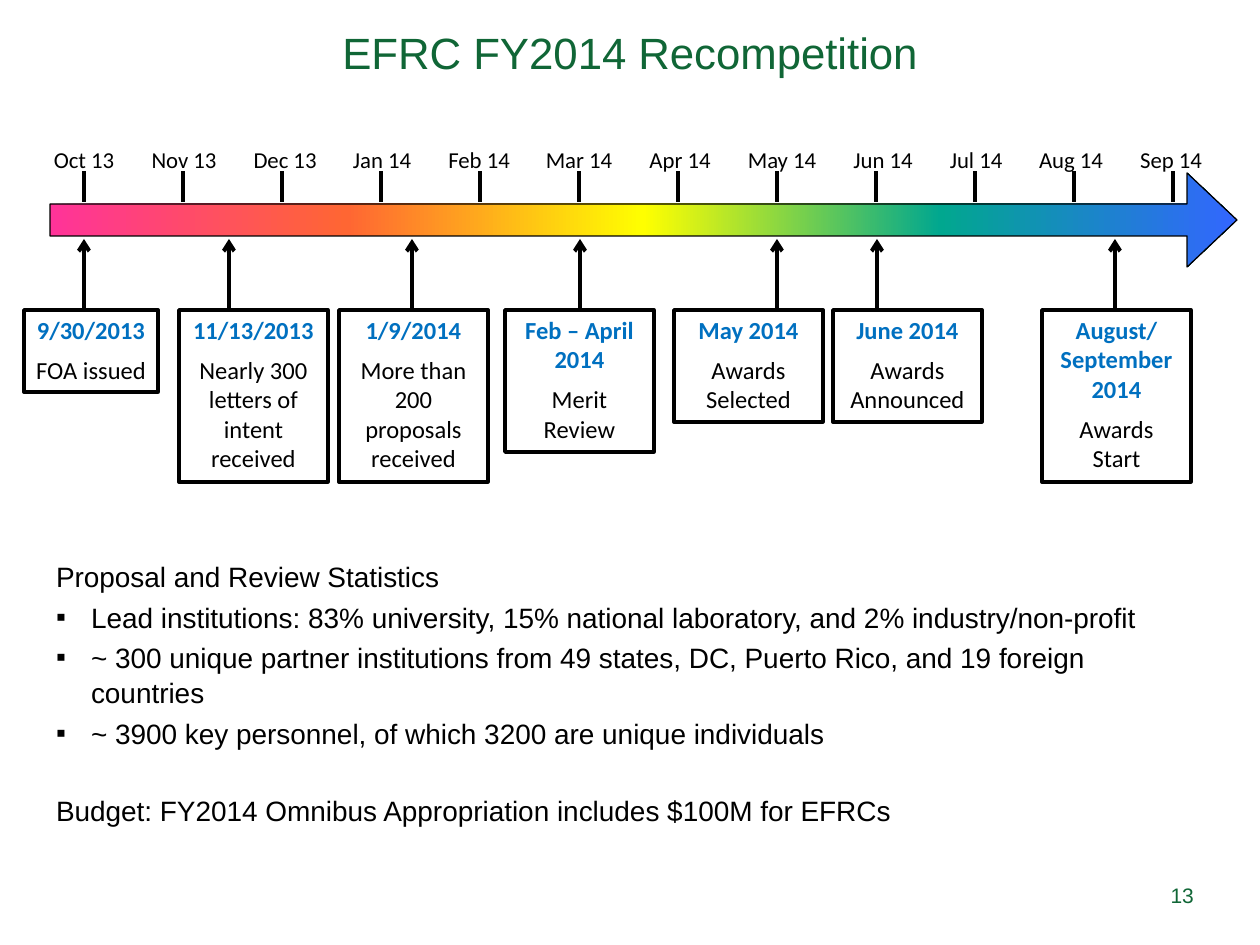
import dataclasses

import pptx
import pptx.dml.color
import pptx.enum.shapes
import pptx.enum.text
import pptx.oxml
import pptx.oxml.ns
import pptx.util

SHAPE = pptx.enum.shapes.MSO_SHAPE
ALIGN = pptx.enum.text.PP_ALIGN
ANCHOR = pptx.enum.text.MSO_ANCHOR
PX_PER_INCH = 126


@dataclasses.dataclass(frozen=True)
class Theme:
    heading_font: str = "Arial"
    timeline_font: str = "Calibri"
    green: str = "106636"
    blue: str = "0070C0"
    ink: str = "000000"
    paper: str = "FFFFFF"
    rainbow: tuple = ("FF3399", "FF6633", "FFFF00", "01A78F", "3366FF")
    title_size: int = 25
    body_size: int = 16
    card_size: int = 14
    month_size: int = 13
    number_size: int = 12


THEME = Theme()

# Month label and the centre of its text
MONTHS = [
    ("Oct 13", 84), ("Nov 13", 184), ("Dec 13", 285), ("Jan 14", 382),
    ("Feb 14", 479), ("Mar 14", 579), ("Apr 14", 680), ("May 14", 782),
    ("Jun 14", 883), ("Jul 14", 976), ("Aug 14", 1071), ("Sep 14", 1171),
]

# Date, event, card left, card width, text lines, pointer x
MILESTONES = [
    ("9/30/2013", "FOA issued", 24, 134, 2, 84),
    ("11/13/2013", "Nearly 300 letters of intent received", 179, 149, 5, 229),
    ("1/9/2014", "More than 200 proposals received", 339, 149, 5, 412),
    ("Feb – April 2014", "Merit Review", 505, 149, 4, 580),
    ("May 2014", "Awards Selected", 674, 149, 3, 777),
    ("June 2014", "Awards Announced", 833, 149, 3, 877),
    ("August/ September 2014", "Awards Start", 1042, 149, 5, 1115),
]

STATISTICS = [
    "Lead institutions: 83% university, 15% national laboratory, and 2% industry/non-profit",
    "~ 300 unique partner institutions from 49 states, DC, Puerto Rico, and 19 foreign countries",
    "~ 3900 key personnel, of which 3200 are unique individuals",
]


def px(length):
    return pptx.util.Emu(round(length * 914400 / PX_PER_INCH))


def rgb(value):
    return pptx.dml.color.RGBColor.from_string(value)


def xml(tag, **attributes):
    element = pptx.oxml.parse_xml(f"<a:{tag} {pptx.oxml.ns.nsdecls('a')}/>")
    for name, value in attributes.items():
        element.set(name, str(value))
    return element


def place(shape, left, top, width, height):
    shape.left, shape.top = px(left), px(top)
    shape.width, shape.height = px(width), px(height)


def set_frame(frame, anchor=ANCHOR.TOP, wrap=True, inset_x=13, inset_y=6):
    frame.auto_size = pptx.enum.text.MSO_AUTO_SIZE.NONE
    frame.word_wrap = wrap
    frame.vertical_anchor = anchor
    frame.margin_left = frame.margin_right = px(inset_x)
    frame.margin_top = frame.margin_bottom = px(inset_y)


def write(frame, text, size, font=THEME.heading_font, color=THEME.ink, bold=False,
          align=ALIGN.LEFT, before=0, after=0, spacing=1.0, bullet=None):
    """Add a paragraph, using the frame's first one while it is empty."""
    paragraph = frame.add_paragraph() if frame.text else frame.paragraphs[0]
    properties = paragraph._p.get_or_add_pPr()
    indent = px(35) if bullet else 0
    properties.set("marL", str(indent))
    properties.set("indent", str(-indent))
    if bullet:
        properties.append(xml("buFont", typeface=THEME.heading_font))
        properties.append(xml("buChar", char=bullet))
    else:
        properties.append(xml("buNone"))
    paragraph.alignment = align
    paragraph.space_before = pptx.util.Pt(before)
    paragraph.space_after = pptx.util.Pt(after)
    paragraph.line_spacing = spacing
    run = paragraph.add_run()
    run.text = text
    run.font.size, run.font.name, run.font.bold = pptx.util.Pt(size), font, bold
    run.font.color.rgb = rgb(color)


def add_line(slide, x, start, end, arrow=False):
    line = slide.shapes.add_connector(
        pptx.enum.shapes.MSO_CONNECTOR.STRAIGHT, px(x), px(start), px(x), px(end))
    line.line.color.rgb = rgb(THEME.ink)
    line.line.width = pptx.util.Pt(2.25)
    if arrow:
        line.line._get_or_add_ln().append(xml("tailEnd", type="arrow"))
    line._element.spPr.append(xml("effectLst"))


def add_shape(slide, preset, left, top, width, height, line_width):
    shape = slide.shapes.add_shape(preset, px(left), px(top), px(width), px(height))
    shape.shadow.inherit = False
    shape.line.color.rgb = rgb(THEME.ink)
    shape.line.width = pptx.util.Pt(line_width)
    return shape


def add_text_box(slide, left, top, width, height, text, size, anchor=ANCHOR.TOP,
                 wrap=True, **style):
    box = slide.shapes.add_textbox(px(left), px(top), px(width), px(height))
    set_frame(box.text_frame, anchor, wrap)
    write(box.text_frame, text, size, **style)


def fill_title(title):
    place(title, 0, 0, 1260, 105)
    set_frame(title.text_frame, ANCHOR.MIDDLE)
    write(title.text_frame, "EFRC FY2014 Recompetition", THEME.title_size,
          color=THEME.green, align=ALIGN.CENTER)


def fill_statistics(body):
    place(body, 43, 552, 1172, 277)
    set_frame(body.text_frame)
    style = dict(size=THEME.body_size, after=3, spacing=1.05)
    write(body.text_frame, "Proposal and Review Statistics", **style)
    for statistic in STATISTICS:
        write(body.text_frame, statistic, bullet="▪", **style)
    write(body.text_frame, "Budget: FY2014 Omnibus Appropriation includes $100M for EFRCs",
          before=21, **style)


def add_months(slide, left, top, pitch):
    for index, (month, centre) in enumerate(MONTHS):
        add_line(slide, left + index * pitch, top + 62, top + 31)
        add_text_box(slide, centre - 46, top, 92, 39, month, THEME.month_size, wrap=False,
                     font=THEME.timeline_font, align=ALIGN.CENTER)


def add_rainbow_arrow(slide, left, top, width, height):
    arrow = add_shape(slide, SHAPE.RIGHT_ARROW, left, top, width, height, 0.75)
    arrow.adjustments[0], arrow.adjustments[1] = 0.34, 0.53
    arrow.fill.gradient()
    arrow.fill.gradient_angle = 0
    stops = arrow._element.spPr.find(".//" + pptx.oxml.ns.qn("a:gsLst"))
    for stop in list(stops):
        stops.remove(stop)
    for index, color in enumerate(THEME.rainbow):
        stop = xml("gs", pos=index * 25000)
        stop.append(xml("srgbClr", val=color))
        stops.append(stop)


def add_milestones(slide, top):
    for date, event, left, width, lines, pointer in MILESTONES:
        add_line(slide, pointer, top - 1, top - 71, arrow=True)
        card = add_shape(slide, SHAPE.RECTANGLE, left, top, width, 22 + 30 * lines, 2)
        card.fill.solid()
        card.fill.fore_color.rgb = rgb(THEME.paper)
        set_frame(card.text_frame, wrap=lines > 2, inset_x=11, inset_y=5)
        style = dict(size=THEME.card_size, font=THEME.timeline_font, align=ALIGN.CENTER)
        write(card.text_frame, date, color=THEME.blue, bold=True, **style)
        write(card.text_frame, event, before=6, **style)


def main():
    deck = pptx.Presentation()
    deck.slide_width, deck.slide_height = px(1260), px(945)
    slide = deck.slides.add_slide(deck.slide_layouts[1])
    fill_title(slide.shapes.title)
    fill_statistics(slide.placeholders[1])
    add_milestones(slide, 310)
    add_months(slide, 84, 140, 99)
    add_rainbow_arrow(slide, 50, 173, 1187, 94)
    add_text_box(slide, 1154, 870, 53, 50, "13", THEME.number_size, anchor=ANCHOR.MIDDLE,
                 color=THEME.green, align=ALIGN.RIGHT)
    deck.save("out.pptx")


if __name__ == "__main__":
    main()
